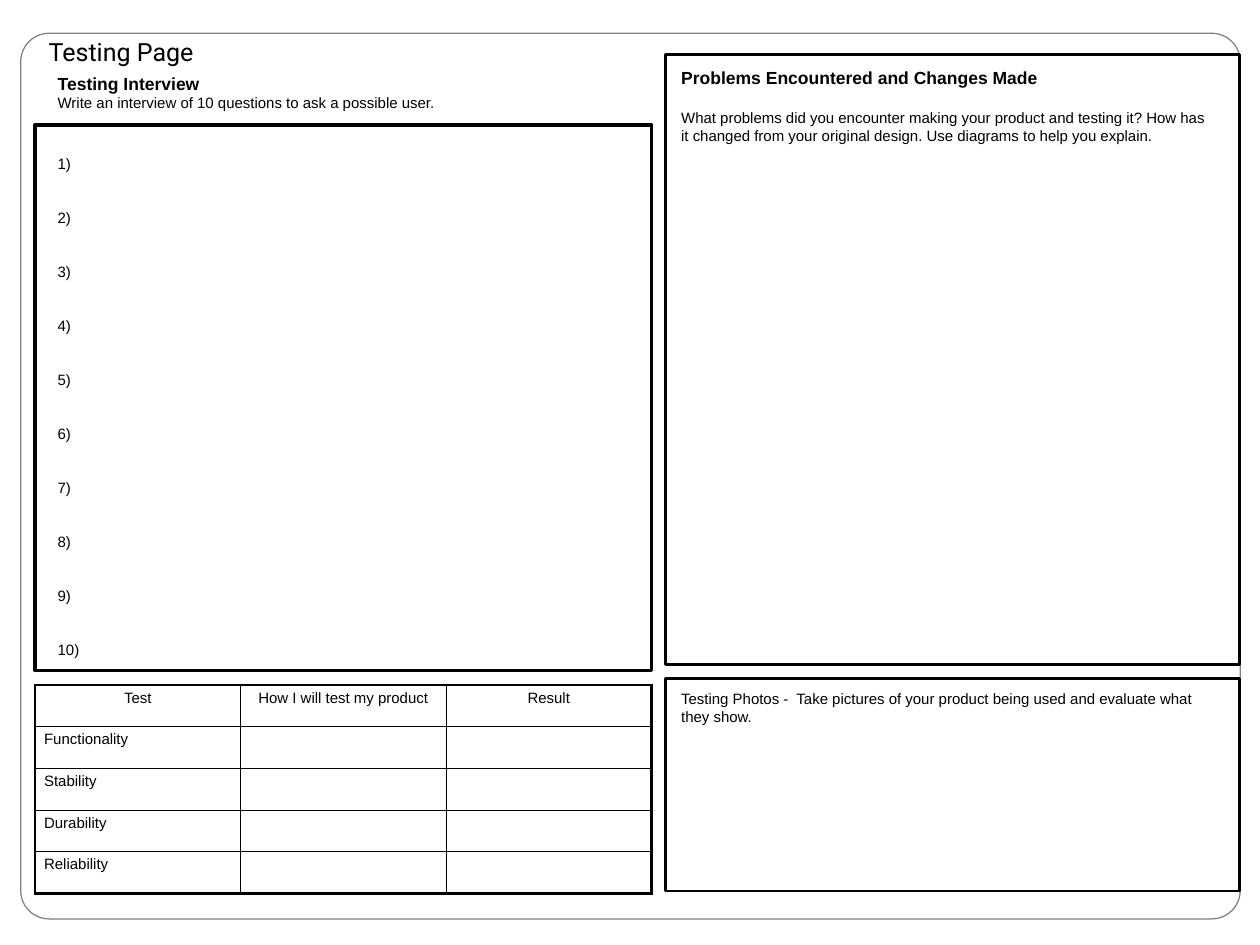
from lxml import etree
from pptx import Presentation
from pptx.dml.color import RGBColor
from pptx.enum.shapes import MSO_SHAPE
from pptx.enum.text import MSO_ANCHOR, MSO_AUTO_SIZE, PP_ALIGN
from pptx.oxml.ns import qn
from pptx.util import Inches, Pt

LEFT, CENTER = PP_ALIGN.LEFT, PP_ALIGN.CENTER
RECT, ROUNDED = MSO_SHAPE.RECTANGLE, MSO_SHAPE.ROUNDED_RECTANGLE
TITLE_AND_BODY = 1
BLACK, GREY = "000000", "808080"
THICK, THIN = 2.25, 1

LEFT_X, LEFT_W = 0.39, 6.85
RIGHT_X, RIGHT_W = 7.39, 6.38
TEST_ROWS = [
    ["Test", "How I will test my product", "Result"],
    ["Functionality", "", ""],
    ["Stability", "", ""],
    ["Durability", "", ""],
    ["Reliability", "", ""],
]


def rgb(hex_color):
    return RGBColor.from_string(hex_color)


def place(shape, x, y, w, h):
    shape.left, shape.top = Inches(x), Inches(y)
    shape.width, shape.height = Inches(w), Inches(h)


def prepare_frame(frame):
    frame.word_wrap = True
    frame.auto_size = MSO_AUTO_SIZE.NONE
    frame.vertical_anchor = MSO_ANCHOR.TOP


def write(frame, text, size=12, bold=False, font="Arial", color=BLACK,
          align=LEFT, before=0):
    """Fill the empty first paragraph, or add a paragraph after the last."""
    last = frame.paragraphs[-1]
    paragraph = frame.add_paragraph() if last.runs else last
    paragraph.alignment = align
    paragraph.space_before = Pt(before)
    run = paragraph.add_run()
    run.text = text
    run.font.size, run.font.bold, run.font.name = Pt(size), bold, font
    run.font.color.rgb = rgb(color)
    return paragraph


def remove_bullet(paragraph):
    properties = paragraph._p.get_or_add_pPr()
    properties.set("marL", "0")
    properties.set("indent", "0")
    etree.SubElement(properties, qn("a:buNone"))


def add_outline(slide, kind, x, y, w, h, width, color=BLACK):
    outline = slide.shapes.add_shape(kind, Inches(x), Inches(y), Inches(w), Inches(h))
    outline.shadow.inherit = False
    outline.fill.background()
    outline.line.color.rgb = rgb(color)
    outline.line.width = Pt(width)
    return outline


def add_text_area(slide, x, y, w, h):
    area = slide.shapes.add_textbox(Inches(x), Inches(y), Inches(w), Inches(h))
    prepare_frame(area.text_frame)
    return area.text_frame


def set_border(cell, side, width):
    line = etree.SubElement(cell._tc.get_or_add_tcPr(), qn(f"a:ln{side}"), w=str(Pt(width)))
    fill = etree.SubElement(line, qn("a:solidFill"))
    etree.SubElement(fill, qn("a:srgbClr"), val=BLACK)


def add_test_table(slide):
    row_count, column_count = len(TEST_ROWS), len(TEST_ROWS[0])
    table = slide.shapes.add_table(row_count, column_count, Inches(LEFT_X), Inches(7.61),
                                   Inches(LEFT_W), Inches(2.32)).table
    table.first_row = table.horz_banding = False
    for r, labels in enumerate(TEST_ROWS):
        for c, label in enumerate(labels):
            cell = table.cell(r, c)
            # The outer edge is thick and the inner grid is thin
            outer = {"L": c == 0, "R": c == column_count - 1,
                     "T": r == 0, "B": r == row_count - 1}
            for side, is_outer in outer.items():
                set_border(cell, side, THICK if is_outer else THIN)
            cell.fill.background()
            if label:
                write(cell.text_frame, label, align=CENTER if r == 0 else LEFT)


def main():
    deck = Presentation()
    deck.slide_width, deck.slide_height = Inches(14), Inches(10.5)
    slide = deck.slides.add_slide(deck.slide_layouts[TITLE_AND_BODY])
    title, interview = slide.shapes.title, slide.placeholders[1]

    # Page frame, behind everything else
    page_frame = add_outline(slide, ROUNDED, 0.23, 0.37, 13.55, 9.84, 1, GREY)
    page_frame.adjustments[0] = 0.032
    title._element.addprevious(page_frame._element)

    # Title
    place(title, 0.44, 0.36, 4.92, 0.44)
    prepare_frame(title.text_frame)
    write(title.text_frame, "Testing Page", size=20, font="Roboto")

    # Interview with ten numbered questions
    place(interview, 0.54, 0.76, 6.69, 6.61)
    questions = interview.text_frame
    prepare_frame(questions)
    write(questions, "Testing Interview", size=14, bold=True)
    write(questions, "Write an interview of 10 questions to ask a possible user.")
    for number in range(1, 11):
        write(questions, f"{number})", before=34.4 if number == 1 else 28.8)
    for paragraph in questions.paragraphs:
        remove_bullet(paragraph)
    add_outline(slide, RECT, LEFT_X, 1.39, LEFT_W, 6.06, 3)

    # Problems and changes
    add_outline(slide, RECT, RIGHT_X, 0.61, RIGHT_W, 6.77, THICK)
    problems = add_text_area(slide, 7.47, 0.69, 6.14, 0.97)
    write(problems, "Problems Encountered and Changes Made", size=14, bold=True)
    write(problems, "What problems did you encounter making your product and testing it? "
          "How has it changed from your original design. Use diagrams to help you explain.",
          before=16.8)

    # Test plan
    add_test_table(slide)

    # Testing photos
    add_outline(slide, RECT, RIGHT_X, 7.54, RIGHT_W, 2.36, THICK)
    photos = add_text_area(slide, 7.47, 7.61, 6.14, 0.5)
    write(photos, "Testing Photos -  Take pictures of your product being used "
          "and evaluate what they show.")

    deck.save("out.pptx")


if __name__ == "__main__":
    main()
